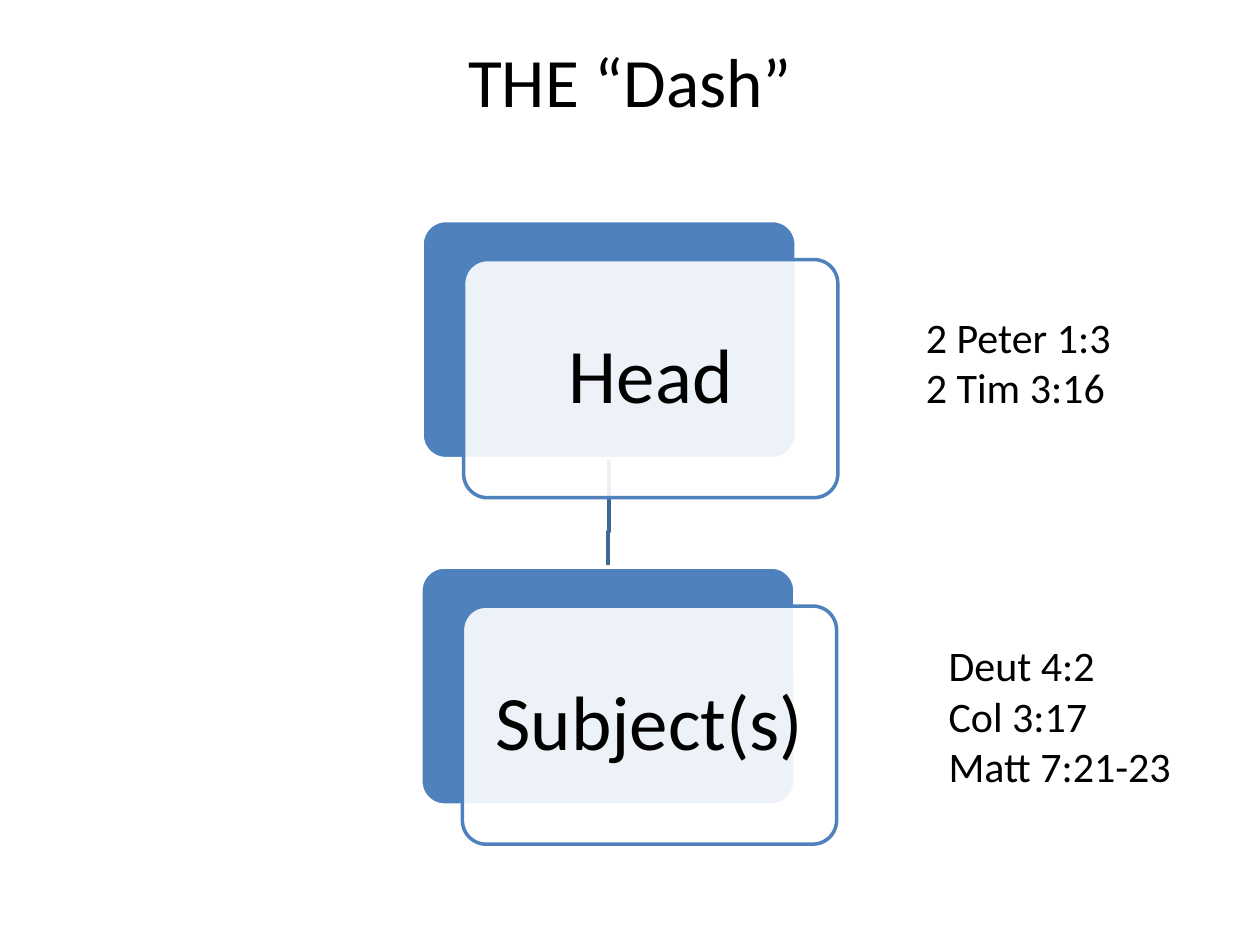
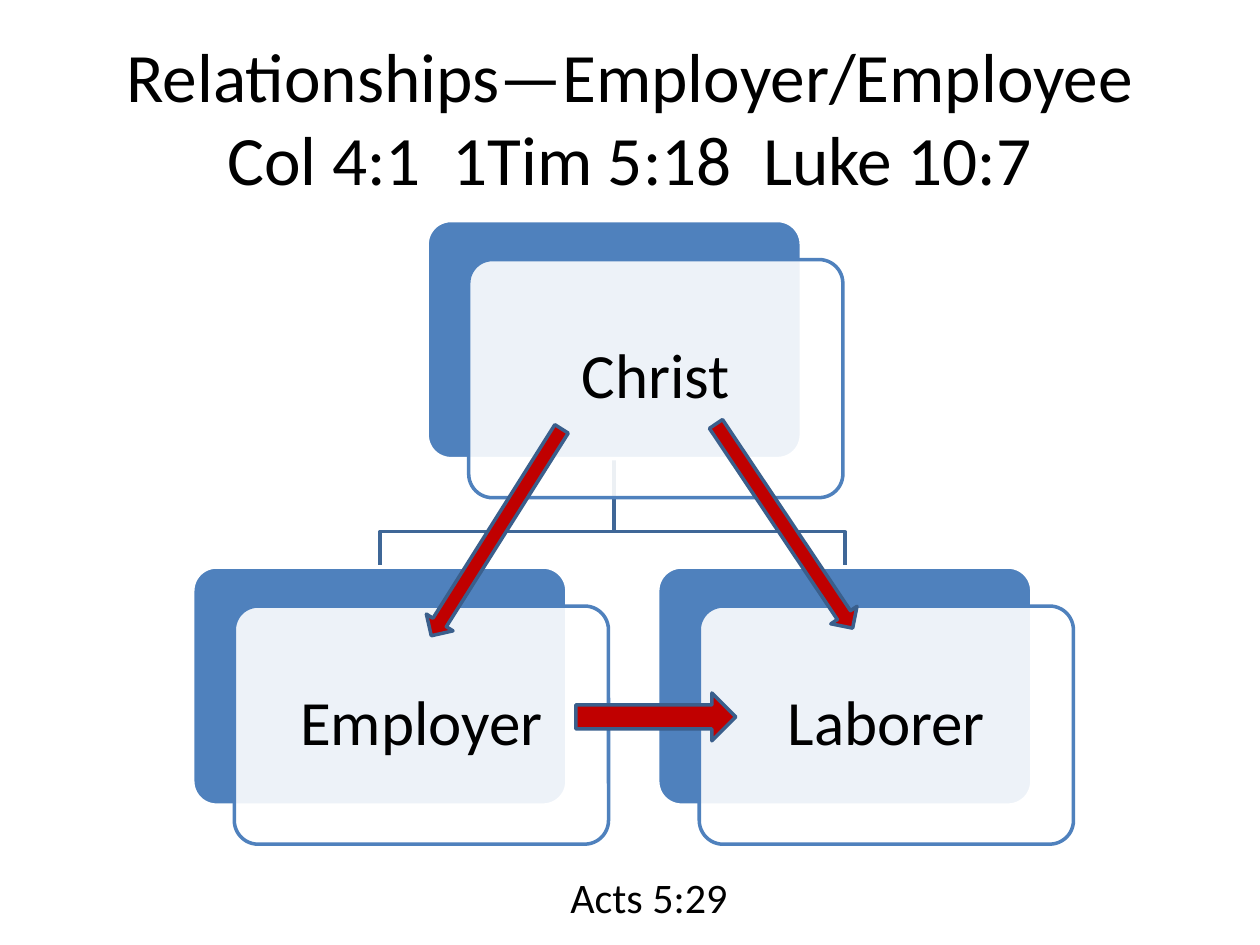
from lxml import etree
from pptx import Presentation
from pptx.dml.color import RGBColor
from pptx.enum.shapes import MSO_SHAPE
from pptx.enum.text import MSO_ANCHOR, MSO_AUTO_SIZE, PP_ALIGN
from pptx.oxml.ns import qn
from pptx.util import Inches, Pt

ROUNDED = MSO_SHAPE.ROUNDED_RECTANGLE
RIGHT_ARROW, LEFT_ARROW = MSO_SHAPE.RIGHT_ARROW, MSO_SHAPE.LEFT_ARROW
TOP, MIDDLE = MSO_ANCHOR.TOP, MSO_ANCHOR.MIDDLE
LEFT, CENTER = PP_ALIGN.LEFT, PP_ALIGN.CENTER
NO_AUTOFIT = MSO_AUTO_SIZE.NONE
TITLE_ONLY = 5

COLORS = {
    "text": "000000",
    "card": "4F81BD",
    "paper": "FFFFFF",
    "branch": "3F6797",
    "arrow": "C00000",
    "arrow_edge": "3A5F8C",
}
FONT = "Calibri"
CARD_W, CARD_H = 2.97, 1.89
CARD_SHIFT_X, CARD_SHIFT_Y = 0.33, 0.31
TOP_ROW, BOTTOM_ROW = 1.75, 4.5
BRANCH_Y = 4.22


def rgb(name):
    return RGBColor.from_string(COLORS[name])


def style_text(frame, size, align):
    for paragraph in frame.paragraphs:
        paragraph.alignment = align
        for run in paragraph.runs:
            run.font.name = FONT
            run.font.size = Pt(size)
            run.font.color.rgb = rgb("text")


def add_titled_slide(prs, text, anchor):
    slide = prs.slides.add_slide(prs.slide_layouts[TITLE_ONLY])
    title = slide.shapes.title
    title.left, title.top = Inches(0.5), Inches(0.3)
    title.width, title.height = Inches(9), Inches(1.25)
    frame = title.text_frame
    frame.text = text
    frame.auto_size = NO_AUTOFIT
    frame.vertical_anchor = anchor
    frame.margin_top = frame.margin_bottom = 0
    style_text(frame, 39.6, CENTER)
    return slide


def set_line(shape, color):
    shape.shadow.inherit = False
    shape.line.color.rgb = rgb(color)
    shape.line.width = Pt(2)


def add_filled(slide, kind, box, fill, line):
    shape = slide.shapes.add_shape(kind, *map(Inches, box))
    shape.fill.solid()
    shape.fill.fore_color.rgb = rgb(fill)
    set_line(shape, line)
    return shape


def add_card(slide, left, top, label, size):
    back = add_filled(slide, ROUNDED, (left, top, CARD_W, CARD_H), "card", "paper")
    front_box = (left + CARD_SHIFT_X, top + CARD_SHIFT_Y, CARD_W, CARD_H)
    front = add_filled(slide, ROUNDED, front_box, "paper", "card")
    for layer in (back, front):
        layer.adjustments[0] = 0.1
    paper = front.element.spPr.find(qn("a:solidFill")).find(qn("a:srgbClr"))
    etree.SubElement(paper, qn("a:alpha")).set("val", "90000")
    frame = front.text_frame
    frame.text = label
    frame.word_wrap = True
    frame.vertical_anchor = MIDDLE
    frame.margin_left = frame.margin_right = Inches(0.15)
    frame.margin_top = frame.margin_bottom = Inches(0.15)
    frame.paragraphs[0].line_spacing = 0.9
    style_text(frame, size, CENTER)


def add_branch(slide, parent_left, child_left):
    start_x, end_x = (left + CARD_W / 2 for left in (parent_left, child_left))
    builder = slide.shapes.build_freeform(Inches(start_x), Inches(TOP_ROW + CARD_H))
    turns = [(start_x, BRANCH_Y), (end_x, BRANCH_Y), (end_x, BOTTOM_ROW)]
    builder.add_line_segments([(Inches(x), Inches(y)) for x, y in turns], close=False)
    branch = builder.convert_to_shape()
    branch.fill.background()
    set_line(branch, "branch")


def add_hierarchy(slide, parent, children, size):
    for child_left, _ in children:
        add_branch(slide, parent[0], child_left)
    add_card(slide, parent[0], TOP_ROW, parent[1], size)
    for child_left, label in children:
        add_card(slide, child_left, BOTTOM_ROW, label, size)


def add_arrow(slide, kind, box, rotation=0):
    arrow = add_filled(slide, kind, box, "arrow", "arrow_edge")
    arrow.rotation = rotation


def add_verses(slide, box, text, align=LEFT, wrap=False):
    frame = slide.shapes.add_textbox(*map(Inches, box)).text_frame
    frame.text = text
    frame.word_wrap = wrap
    style_text(frame, 24, align)


def build_dash(prs):
    slide = add_titled_slide(prs, "THE “Dash”", TOP)
    add_hierarchy(slide, (3.35, "Head"), [(3.34, "Subject(s)")], 44)
    add_verses(slide, (7.25, 2.42, 1.68, 0.91), "2 Peter 1:3\n2 Tim 3:16")
    add_verses(slide, (7.43, 5.03, 1.99, 1.31), "Deut 4:2\nCol 3:17\nMatt 7:21-23")


def build_employment(prs):
    title = "Relationships—Employer/Employee\vCol 4:1  1Tim 5:18  Luke 10:7"
    slide = add_titled_slide(prs, title, MIDDLE)
    children = [(1.53, "Employer"), (5.22, "Laborer")]
    add_hierarchy(slide, (3.39, "Christ"), children, 36)
    add_arrow(slide, RIGHT_ARROW, (4.57, 5.5, 1.27, 0.38))
    add_arrow(slide, LEFT_ARROW, (2.97, 4.1, 1.94, 0.25), 302.2)
    add_arrow(slide, LEFT_ARROW, (5.25, 4.05, 1.95, 0.25), 236.2)
    add_verses(slide, (3.94, 6.87, 2.42, 0.5), "Acts 5:29", CENTER, True)


def main():
    prs = Presentation()
    prs.slide_width, prs.slide_height = Inches(10), Inches(7.5)
    build_dash(prs)
    build_employment(prs)
    prs.save("out.pptx")


if __name__ == "__main__":
    main()
